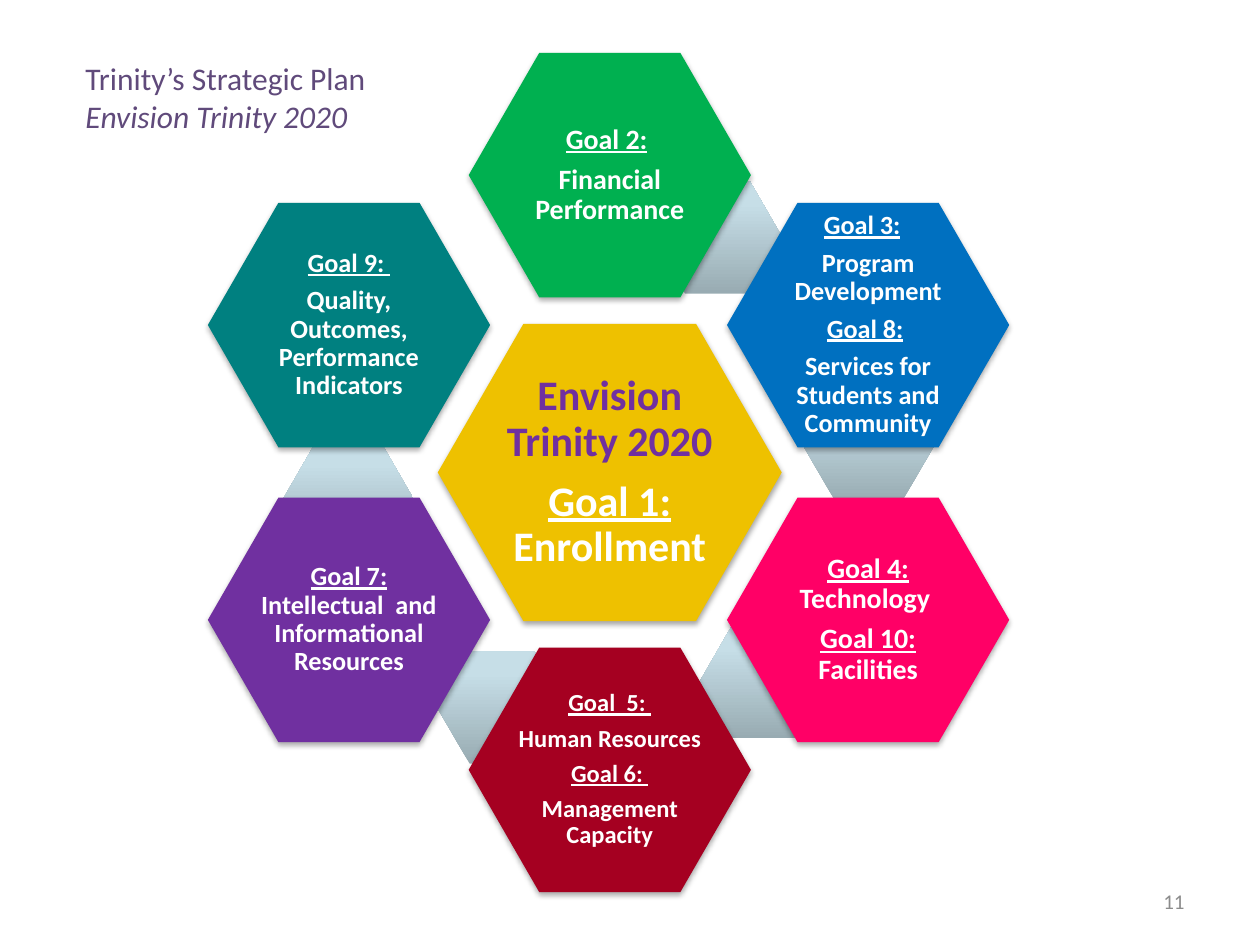
from pptx import Presentation
from pptx.dml.color import RGBColor
from pptx.enum.shapes import MSO_SHAPE
from pptx.enum.text import MSO_ANCHOR, PP_ALIGN
from pptx.oxml import parse_xml
from pptx.oxml.ns import nsdecls
from pptx.util import Inches, Pt

COLORS = {
    "gold": "EEC100", "green": "00B050", "blue": "0070C0", "pink": "FF0066",
    "red": "A50021", "purple": "7030A0", "teal": "008080", "white": "FFFFFF",
    "title": "604A7B", "number": "8C8C8C",
    "steel": "98ABB2", "mist": "C6DEE7", "pale": "C6DFE8",
}

# Column and row centres of the ring
LEFT, MIDDLE, RIGHT = 2.77, 4.84, 6.89
TOP, UPPER, CENTER, LOWER, BOTTOM = 1.39, 2.58, 3.75, 4.92, 6.11

# Centre x, centre y, fill, text size, paragraphs of (text, underlined) runs
GOALS = [
    (MIDDLE, TOP, "green", 16, [
        [("Goal 2:", True), (" ", False)],
        [("Financial Performance", False)]]),
    (RIGHT, UPPER, "blue", 15, [
        [("Goal 3:", True), ("  ", False)],
        [("Program Development", False)],
        [("Goal 8:", True), (" ", False)],
        [("Services for Students and Community", False)]]),
    (RIGHT, LOWER, "pink", 16, [
        [("Goal 4: ", True), ("Technology ", False)],
        [("Goal 10: ", True), ("Facilities", False)]]),
    (MIDDLE, BOTTOM, "red", 14, [
        [("Goal  5: ", True)],
        [("Human Resources", False)],
        [("Goal 6: ", True)],
        [("Management Capacity", False)]]),
    (LEFT, LOWER, "purple", 15, [
        [("Goal 7: ", True),
         ("Intellectual  and Informational Resources", False)]]),
    (LEFT, UPPER, "teal", 15, [
        [("Goal 9: ", True)],
        [("Quality, Outcomes, Performance Indicators", False)]]),
]

# Left and top of the small hexagon behind each goal
ACCENTS = [(5.18, 1.44), (6.38, 3.1), (5.55, 4.97), (3.47, 5.17), (2.25, 3.51)]


def rgb(name):
    return RGBColor.from_string(COLORS[name])


def add_run(p, text, size, color, bold=False, italic=False, underline=False):
    r = p.add_run()
    r.text = text
    font = r.font
    font.name, font.size = "Calibri", Pt(size)
    font.color.rgb = rgb(color)
    font.bold, font.italic, font.underline = bold, italic, underline


def next_paragraph(tf, index):
    return tf.add_paragraph() if index else tf.paragraphs[0]


def add_shadow(sp):
    sp._element.spPr.append(parse_xml(
        f'<a:effectLst {nsdecls("a")}><a:outerShdw blurRad="40000" dist="23000" '
        'dir="5400000" rotWithShape="0"><a:srgbClr val="000000">'
        '<a:alpha val="35000"/></a:srgbClr></a:outerShdw></a:effectLst>'))


def add_hexagon(s, cx, cy, width, height, notch, fill, insets):
    """Draw a flat-topped hexagon around its centre and return its text frame."""
    x, y = cx - width / 2, cy - height / 2
    right, bottom = x + width, y + height
    corners = [(x, cy), (x + notch, y), (right - notch, y), (right, cy),
               (right - notch, bottom), (x + notch, bottom)]
    points = [(Inches(px), Inches(py)) for px, py in corners]
    builder = s.shapes.build_freeform(*points[0])
    builder.add_line_segments(points[1:], close=True)
    sp = builder.convert_to_shape()
    sp.fill.solid()
    sp.fill.fore_color.rgb = rgb(fill)
    sp.line.fill.background()
    add_shadow(sp)
    tf = sp.text_frame
    tf.word_wrap = True
    tf.vertical_anchor = MSO_ANCHOR.MIDDLE
    tf.margin_left = tf.margin_right = Inches(insets[0])
    tf.margin_top = tf.margin_bottom = Inches(insets[1])
    return tf


def add_goal_paragraph(tf, index):
    p = next_paragraph(tf, index)
    p.alignment = PP_ALIGN.CENTER
    p.line_spacing = 0.9
    p._p.get_or_add_pPr().append(parse_xml(
        f'<a:spcAft {nsdecls("a")}><a:spcPct val="35000"/></a:spcAft>'))
    return p


def add_goal(s, cx, cy, fill, size, paragraphs):
    tf = add_hexagon(s, cx, cy, 2.24, 1.94, 0.56, fill, (0.39, 0.34))
    for i, runs in enumerate(paragraphs):
        p = add_goal_paragraph(tf, i)
        for text, underline in runs:
            add_run(p, text, size, "white", bold=True, underline=underline)


def add_center(s):
    tf = add_hexagon(s, MIDDLE, CENTER, 2.73, 2.36, 0.68, "gold", (0.49, 0.43))
    add_run(add_goal_paragraph(tf, 0), "Envision Trinity 2020", 24, "purple", bold=True)
    p = add_goal_paragraph(tf, 1)
    add_run(p, "Goal 1:", 24, "white", bold=True, underline=True)
    add_run(p, " Enrollment", 24, "white", bold=True)


def add_accent(s, left, top):
    sp = s.shapes.add_shape(MSO_SHAPE.HEXAGON, Inches(left), Inches(top),
                            Inches(1.03), Inches(0.89))
    sp.adjustments[0] = 0.289
    stops = "".join(
        f'<a:gs pos="{pos * 1000}"><a:srgbClr val="{COLORS[name]}"/></a:gs>'
        for pos, name in [(0, "steel"), (80, "mist"), (100, "pale")])
    sp._element.spPr.append(parse_xml(
        f'<a:gradFill {nsdecls("a")} rotWithShape="1"><a:gsLst>{stops}</a:gsLst>'
        '<a:lin ang="16200000" scaled="0"/></a:gradFill>'))
    sp.line.fill.background()
    sp.shadow.inherit = False


def add_text_box(s, left, top, width, height):
    box = s.shapes.add_textbox(Inches(left), Inches(top), Inches(width), Inches(height))
    return box.text_frame


def add_title(s):
    tf = add_text_box(s, 0.58, 0.42, 2.45, 0.71)
    tf.word_wrap = False
    lines = [("Trinity’s Strategic Plan", False), ("Envision Trinity 2020", True)]
    for i, (text, italic) in enumerate(lines):
        add_run(next_paragraph(tf, i), text, 18, "title", italic=italic)


def add_slide_number(s):
    tf = add_text_box(s, 7.17, 6.95, 2.33, 0.4)
    tf.word_wrap = True
    tf.vertical_anchor = MSO_ANCHOR.MIDDLE
    p = tf.paragraphs[0]
    p.alignment = PP_ALIGN.RIGHT
    add_run(p, "11", 12, "number")


def main():
    prs = Presentation()
    prs.slide_width, prs.slide_height = Inches(10), Inches(7.5)
    s = prs.slides.add_slide(prs.slide_layouts[6])

    # Ring of goals around the centre, each over its accent
    add_center(s)
    for i, goal in enumerate(GOALS):
        if i < len(ACCENTS):
            add_accent(s, *ACCENTS[i])
        add_goal(s, *goal)

    # Title and slide number
    add_title(s)
    add_slide_number(s)
    prs.save("out.pptx")


if __name__ == "__main__":
    main()
